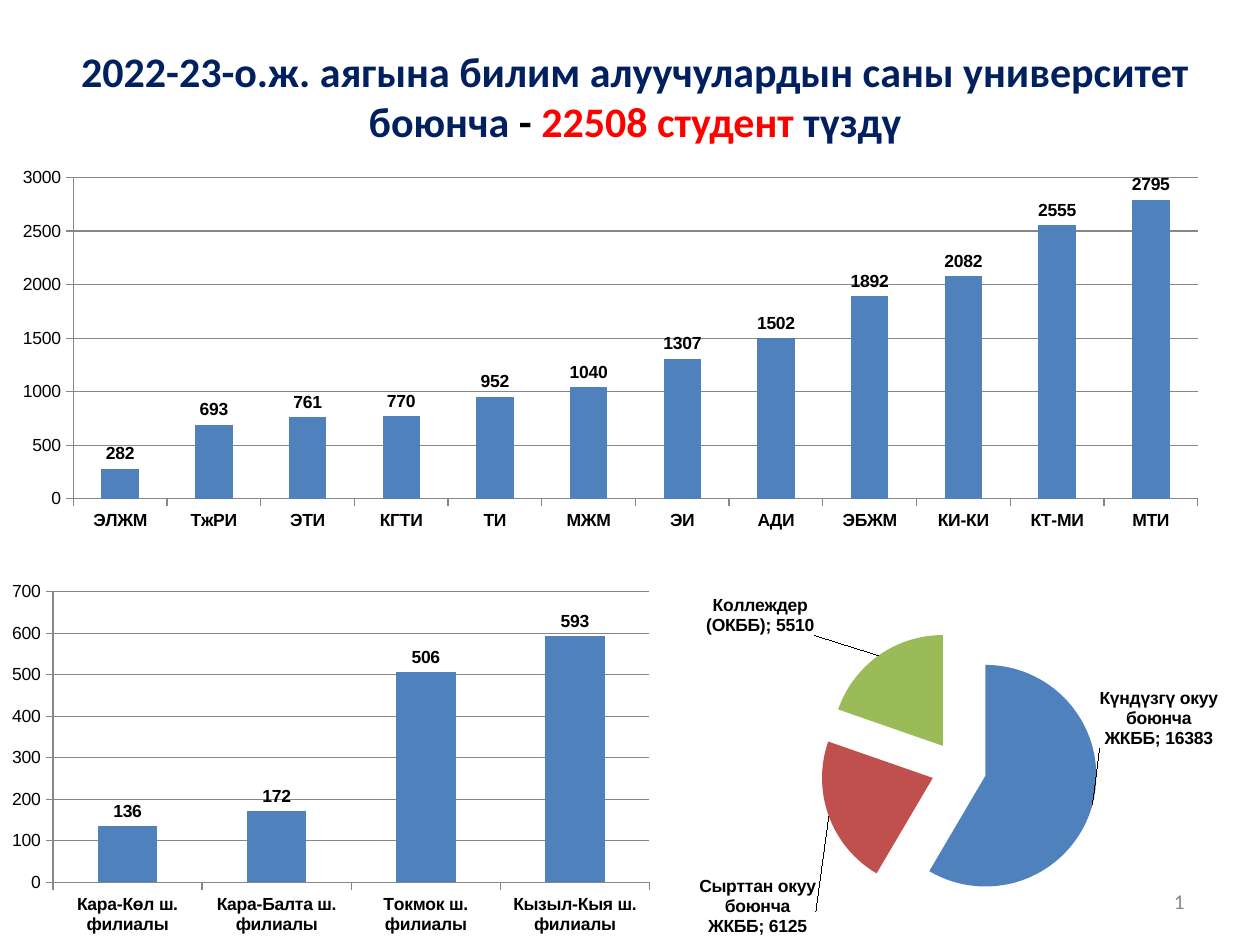
from lxml import etree
from pptx import Presentation, oxml, util as u
from pptx.chart import data as cd
from pptx.dml import color as dml
from pptx.enum import chart as ec, text as et
from pptx.oxml import ns

COLORS = {
    "navy": "002060", "red": "FF0000", "black": "000000", "gray": "888888",
    "line": "878787", "blue": "4F81BD", "brick": "C0504D", "green": "9BBB59",
}
INSTITUTES = {
    "ЭЛЖМ": 282, "ТжРИ": 693, "ЭТИ": 761, "КГТИ": 770, "ТИ": 952, "МЖМ": 1040,
    "ЭИ": 1307, "АДИ": 1502, "ЭБЖМ": 1892, "КИ-КИ": 2082, "КТ-МИ": 2555, "МТИ": 2795,
}
BRANCHES = {
    "Кара-Көл ш. филиалы": 136, "Кара-Балта ш. филиалы": 172,
    "Токмок ш. филиалы": 506, "Кызыл-Кыя ш. филиалы": 593,
}
STUDY_FORMS = {
    "Күндүзгү окуу боюнча ЖКББ": 16383,
    "Сырттан окуу боюнча ЖКББ": 6125,
    "Коллеждер (ОКББ)": 5510,
}
PIE_STYLES = [("blue", 0, -0.33), ("brick", -0.01, 0.26), ("green", -0.1, -0.04)]


def rgb(name):
    return dml.RGBColor.from_string(COLORS[name])


def style_font(font, name, size, color, bold=False):
    font.name, font.size, font.bold = name, u.Pt(size), bold
    font.color.rgb = rgb(color)


def make_layout(**values):
    layout = etree.Element(ns.qn("c:layout"))
    manual = etree.SubElement(layout, ns.qn("c:manualLayout"))
    for tag, value in values.items():
        etree.SubElement(manual, ns.qn(f"c:{tag}"), val=str(value))
    return layout


def place_plot(chart, x, y, w, h):
    area = chart._chartSpace.chart.plotArea
    for old in area.findall(ns.qn("c:layout")):
        area.remove(old)
    area.insert(0, make_layout(layoutTarget="inner", xMode="edge", yMode="edge",
                               x=x, y=y, w=w, h=h))


def add_title(s, box, parts):
    sp = s.shapes.title
    sp.left, sp.top, sp.width, sp.height = map(u.Inches, box)
    tf = sp.text_frame
    tf.auto_size = et.MSO_AUTO_SIZE.NONE
    tf.vertical_anchor = et.MSO_ANCHOR.TOP
    tf.margin_top = u.Inches(0.08)
    p = tf.paragraphs[0]
    p.alignment = et.PP_ALIGN.CENTER
    for content, color in parts:
        r = p.add_run()
        r.text = content
        style_font(r.font, "Calibri", 24, color, True)


def add_slide_number(s, box, number):
    tf = s.shapes.add_textbox(*map(u.Inches, box)).text_frame
    tf.word_wrap = True
    tf.vertical_anchor = et.MSO_ANCHOR.MIDDLE
    p = tf.paragraphs[0]
    p.alignment = et.PP_ALIGN.RIGHT
    p._p.append(oxml.parse_xml(
        f'<a:fld {ns.nsdecls("a")} id="{{B6F15528-21DE-4FAA-801E-634DDDAF4B2B}}" type="slidenum">'
        f'<a:rPr lang="ru-RU" sz="1200"><a:solidFill><a:srgbClr val="{COLORS["gray"]}"/>'
        f'</a:solidFill><a:latin typeface="Calibri"/></a:rPr><a:t>{number}</a:t></a:fld>'))


def add_chart(s, kind, box, values, plot_box):
    data = cd.CategoryChartData()
    data.categories = list(values)
    data.add_series("Series 1", list(values.values()))
    chart = s.shapes.add_chart(kind, *map(u.Inches, box), data).chart
    chart.has_title = chart.has_legend = False
    style_font(chart.font, "Arial", 10, "black")
    place_plot(chart, *plot_box)
    return chart


def add_column_chart(s, box, values, plot_box, top, step):
    chart = add_chart(s, ec.XL_CHART_TYPE.COLUMN_CLUSTERED, box, values, plot_box)
    plot = chart.plots[0]
    plot.gap_width = 150
    plot.vary_by_categories = False
    fill = plot.series[0].format.fill
    fill.solid()
    fill.fore_color.rgb = rgb("blue")
    plot.has_data_labels = True
    labels = plot.data_labels
    labels.show_value = True
    labels.position = ec.XL_LABEL_POSITION.OUTSIDE_END
    style_font(labels.font, "Arial", 10, "black", True)
    axis = chart.value_axis
    axis.minimum_scale, axis.maximum_scale, axis.major_unit = 0, top, step
    axis.has_major_gridlines = True
    style_font(chart.category_axis.tick_labels.font, "Arial", 10, "black", True)
    for item in (axis, chart.category_axis):
        item.major_tick_mark = ec.XL_TICK_MARK.OUTSIDE
    for item in (axis, chart.category_axis, axis.major_gridlines):
        item.format.line.color.rgb = rgb("line")
        item.format.line.width = u.Pt(0.75)


def add_pie_chart(s, box, values, plot_box):
    chart = add_chart(s, ec.XL_CHART_TYPE.PIE, box, values, plot_box)
    chart.plots[0].vary_by_categories = True
    series = chart.plots[0].series[0]
    for i, (color, dx, dy) in enumerate(PIE_STYLES):
        point = series.points[i]
        point.format.fill.solid()
        point.format.fill.fore_color.rgb = rgb(color)
        label = point.data_label
        style_font(label.font, "Arial", 10, "black", True)
        label.position = ec.XL_LABEL_POSITION.OUTSIDE_END
    ser = series._element
    for dlbl, (_, dx, dy) in zip(ser.iter(ns.qn("c:dLbl")), PIE_STYLES):
        dlbl.insert(1, make_layout(x=dx, y=dy))
        dlbl.find(ns.qn("c:showCatName")).set("val", "1")
        etree.SubElement(dlbl, ns.qn("c:separator")).text = "; "
    series.data_labels.show_category_name = True
    explosion = etree.Element(ns.qn("c:explosion"), val="25")
    ser.find(ns.qn("c:dPt")).addprevious(explosion)


def main():
    prs = Presentation()
    prs.slide_width, prs.slide_height = u.Inches(10), u.Inches(7.5)
    s = prs.slides.add_slide(prs.slide_layouts[5])
    add_title(s, (0.12, 0.28, 9.84, 1.1), [
        ("2022-23-о.ж. аягына билим алуучулардын саны университет боюнча ", "navy"),
        ("- ", "black"), ("22508 студент ", "red"), ("түздү", "navy")])
    add_slide_number(s, (7.17, 6.95, 2.33, 0.4), 6)
    add_column_chart(s, (0, 1.26, 9.7, 3), INSTITUTES, (0.06, 0.05, 0.92, 0.85), 3000, 500)
    add_column_chart(s, (0, 4.58, 5.26, 2.92), BRANCHES, (0.08, 0.04, 0.9, 0.79), 700, 100)
    add_pie_chart(s, (5.22, 4.6, 4.78, 2.83), STUDY_FORMS, (0.27, 0.14, 0.46, 0.78))
    prs.save("out.pptx")


if __name__ == "__main__":
    main()
